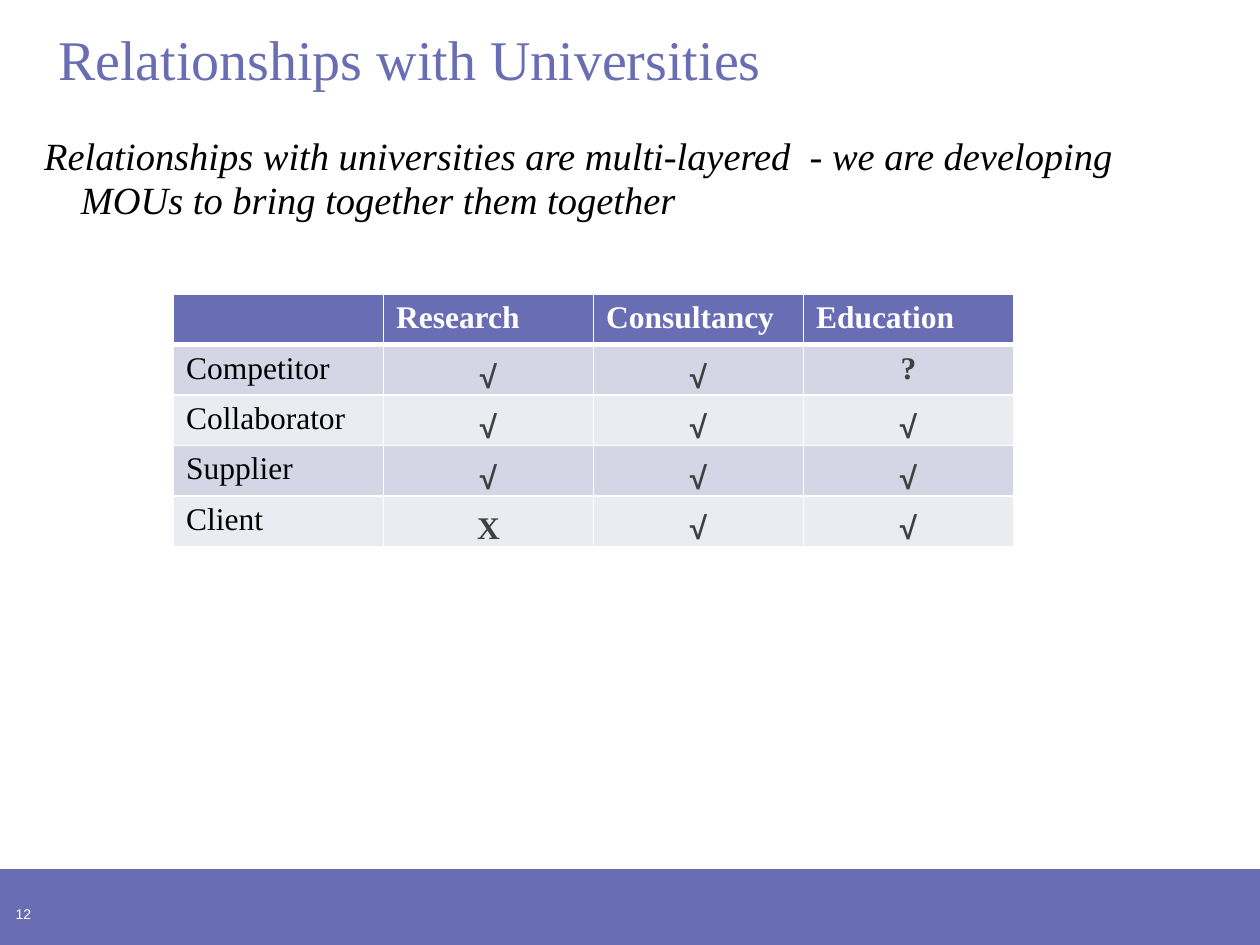
from dataclasses import dataclass

from lxml.etree import SubElement
from pptx import Presentation
from pptx.dml.color import RGBColor
from pptx.enum.shapes import MSO_CONNECTOR, MSO_SHAPE
from pptx.enum.text import MSO_ANCHOR, PP_ALIGN
from pptx.oxml import parse_xml
from pptx.oxml.ns import nsdecls, qn
from pptx.util import Cm, Pt

SERIF, SANS = "Times New Roman", "Arial"
VIOLET, WHITE, BLACK, GREY = "696EB4", "FFFFFF", "000000", "404040"
BANDS = ("D4D5E5", "EBEBF2")
WIDE, HIGH, BAND_TOP = Cm(25.4), Cm(19.05), Cm(17.48)


@dataclass
class Style:
    size: float
    color: str
    name: str = SERIF
    bold: bool = False
    italic: bool = False


HEAD = Style(18, WHITE, bold=True)
LABEL = Style(18, BLACK)
LETTER = Style(18, GREY, bold=True)
TICK = Style(18, GREY, SANS, bold=True)

ROWS = (
    ("", "Research", "Consultancy", "Education"),
    ("Competitor", "√", "√", "?"),
    ("Collaborator", "√", "√", "√"),
    ("Supplier", "√", "√", "√"),
    ("Client", "X", "√", "√"),
)


def paint(color, value: str) -> None:
    color.rgb = RGBColor.from_string(value)


def fill(item, value: str) -> None:
    item.fill.solid()
    paint(item.fill.fore_color, value)


def write(frame, text: str, style: Style, align=PP_ALIGN.LEFT):
    frame.text = text
    para = frame.paragraphs[0]
    para.alignment = align
    font = para.font
    font.size, font.name = Pt(style.size), style.name
    font.bold, font.italic = style.bold, style.italic
    paint(font.color, style.color)
    return para


def inset(item, left=0, top=0, right=0, bottom=0) -> None:
    item.margin_left, item.margin_top = left, top
    item.margin_right, item.margin_bottom = right, bottom


def place(shape, left, top, width, height) -> None:
    shape.left, shape.top = left, top
    shape.width, shape.height = width, height


def edge(cell, top: float, bottom: float) -> None:
    """Give a cell white borders, with the top and bottom widths in points."""
    props = cell._tc.get_or_add_tcPr()
    sides = {"L": 1, "R": 1, "T": top, "B": bottom}
    for spot, (side, width) in enumerate(sides.items()):
        props.insert(spot, parse_xml(
            f'<a:ln{side} {nsdecls("a")} w="{Pt(width)}"><a:solidFill>'
            f'<a:srgbClr val="{WHITE}"/></a:solidFill></a:ln{side}>'))


def add_band(slide) -> None:
    band = slide.shapes.add_shape(
        MSO_SHAPE.RECTANGLE, 0, BAND_TOP, WIDE, HIGH - BAND_TOP)
    band.shadow.inherit = False
    fill(band, VIOLET)
    band.line.fill.background()

    rule = slide.shapes.add_connector(
        MSO_CONNECTOR.STRAIGHT, 0, BAND_TOP, WIDE, BAND_TOP)
    rule.line.width = Pt(2)
    paint(rule.line.color, WHITE)
    SubElement(rule._element.spPr, qn("a:effectLst"))

    frame = slide.shapes.add_textbox(0, Cm(17.5), Cm(0.79), Cm(1.55)).text_frame
    frame.word_wrap = True
    frame.vertical_anchor = MSO_ANCHOR.BOTTOM
    inset(frame, right=Cm(0.16), bottom=Cm(0.56))
    write(frame, "12", Style(8, WHITE, SANS), PP_ALIGN.RIGHT)


def add_title(slide) -> None:
    title = slide.shapes.title
    place(title, Cm(1.17), Cm(0.69), Cm(23.11), Cm(1.17))
    frame = title.text_frame
    frame.vertical_anchor = MSO_ANCHOR.TOP
    inset(frame)
    para = write(frame, "Relationships with Universities", Style(32, VIOLET))
    para.line_spacing = Pt(33)


def add_lead(slide) -> None:
    frame = slide.shapes.add_textbox(
        Cm(0.89), Cm(2.72), Cm(23.37), Cm(13.77)).text_frame
    frame.word_wrap = True
    inset(frame)
    para = write(
        frame,
        "Relationships with universities are multi-layered  - we are "
        "developing MOUs to bring together them together",
        Style(22, BLACK, italic=True))
    para.line_spacing = Pt(25)
    props = para._p.get_or_add_pPr()
    props.set("marL", str(Cm(0.74)))
    props.set("indent", str(-Cm(0.74)))


def add_grid(slide) -> None:
    grid = slide.shapes.add_table(
        len(ROWS), len(ROWS[0]), Cm(3.5), Cm(5.93), Cm(16.93), Cm(4.83)).table
    for r, row in enumerate(ROWS):
        for c, text in enumerate(row):
            cell = grid.cell(r, c)
            fill(cell, BANDS[(r - 1) % 2] if r else VIOLET)
            edge(cell, 3 if r == 1 else 1, 1 if r else 3)
            style, align = (LABEL if r else HEAD), PP_ALIGN.LEFT
            if r and c:
                style = TICK if text == "√" else LETTER
                align = PP_ALIGN.CENTER
                if text != "?":
                    cell.vertical_anchor = MSO_ANCHOR.BOTTOM
                    inset(cell)
            write(cell.text_frame, text, style, align)


def main() -> None:
    deck = Presentation()
    deck.slide_width, deck.slide_height = WIDE, HIGH
    slide = deck.slides.add_slide(deck.slide_layouts[5])
    add_band(slide)
    add_title(slide)
    add_lead(slide)
    add_grid(slide)
    deck.save("out.pptx")


if __name__ == "__main__":
    main()
